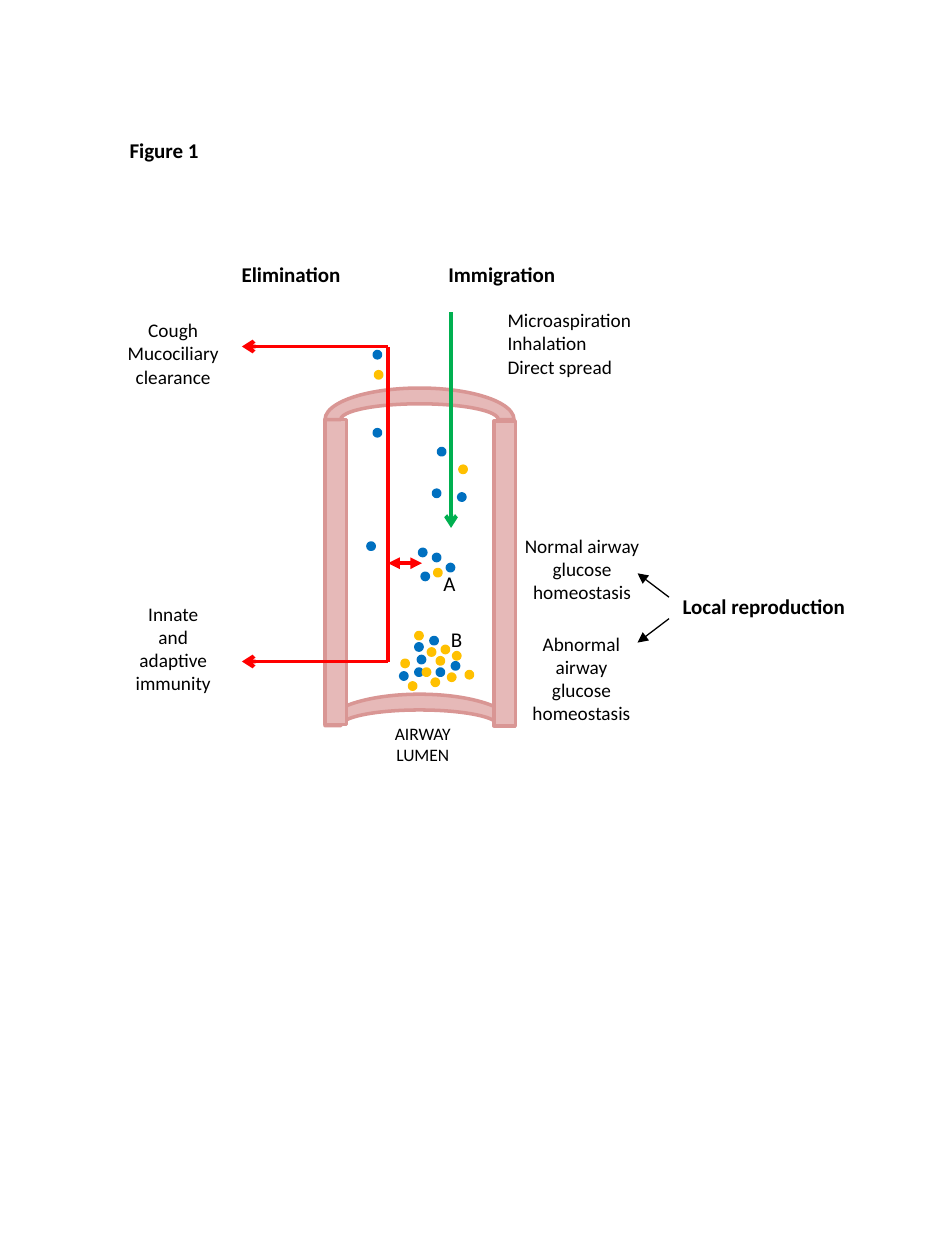
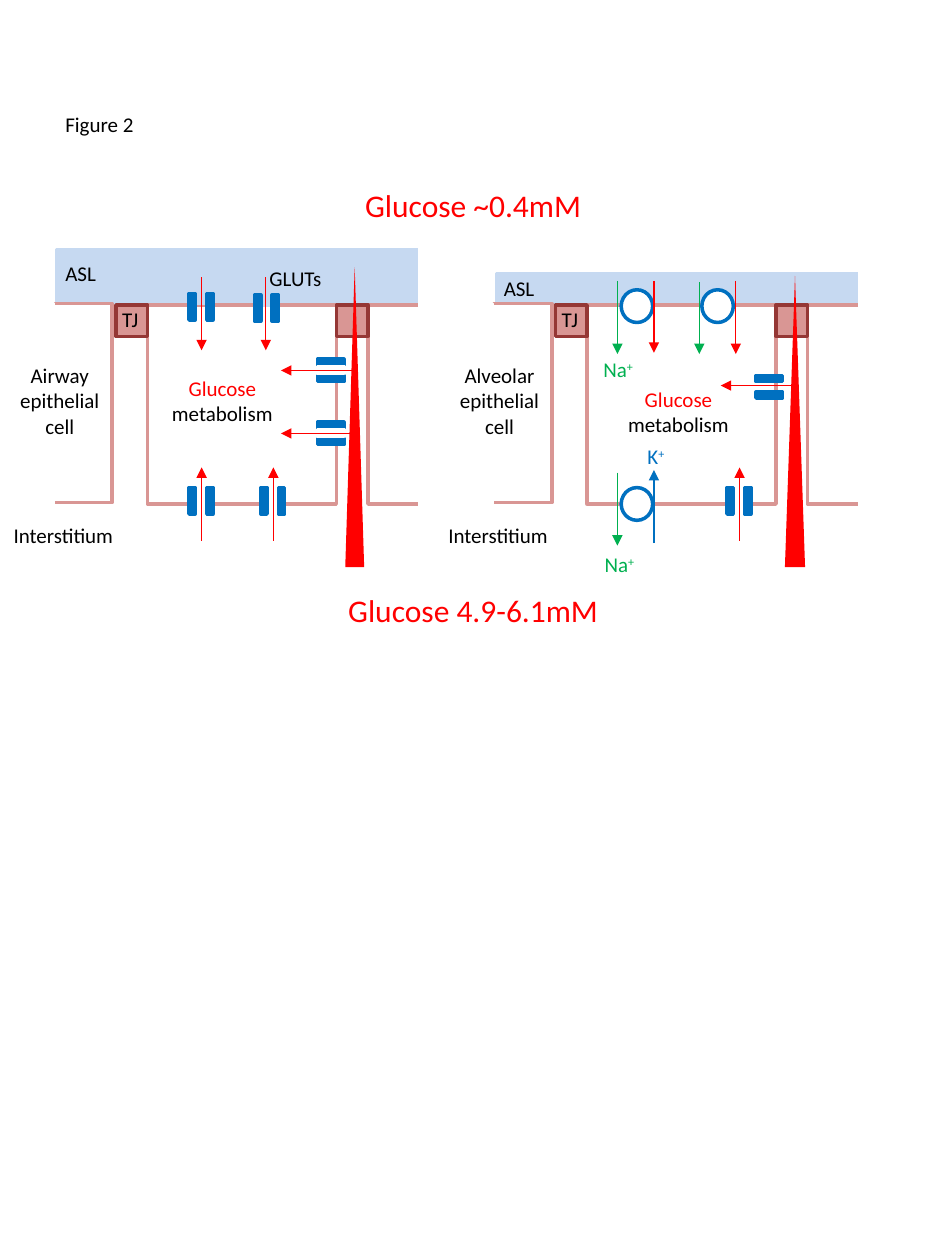
from lxml.etree import SubElement
from pptx import Presentation
from pptx.dml.color import RGBColor
from pptx.enum.shapes import MSO_CONNECTOR, MSO_SHAPE
from pptx.enum.text import MSO_AUTO_SIZE, PP_ALIGN
from pptx.oxml.ns import qn
from pptx.util import Inches, Pt

BLACK, WHITE, RED, GREEN = "000000", "FFFFFF", "FF0000", "00B050"
BLUE, YELLOW = "0070C0", "FFC000"
WALL, MEMBRANE, JUNCTION_EDGE, SURFACE_LIQUID = "E6B9B8", "D99694", "953735", "C6D9F1"

FONT = "Calibri"
HEADING = {"size": 12, "bold": True}
CENTRED_HEADING = HEADING | {"align": PP_ALIGN.CENTER}
DETAIL = {"size": 11}
CENTRED_DETAIL = {"size": 11, "align": PP_ALIGN.CENTER}
CAPTION = {"size": 10, "align": PP_ALIGN.CENTER}
LABEL = {"size": 12}
CENTRED_LABEL = {"size": 12, "align": PP_ALIGN.CENTER}
LETTER = {"size": 12, "wrap": False}
LEVEL = {"size": 18, "color": RED, "align": PP_ALIGN.CENTER}

# Slide 1: text is (content, left, top, width, height, format)
AIRWAY_WALL = [
    (MSO_SHAPE.BLOCK_ARC, 2.58, 5.51, 1.5, 0.5),
    (MSO_SHAPE.RECTANGLE, 2.58, 3.33, 0.17, 2.42),
    (MSO_SHAPE.RECTANGLE, 3.92, 3.34, 0.17, 2.42),
    (MSO_SHAPE.BLOCK_ARC, 2.58, 3.08, 1.5, 0.5),
]
BACTERIA = {
    BLUE: [
        (3.48, 3.56), (3.64, 3.92), (3.44, 3.89), (2.92, 4.31), (2.97, 3.41),
        (2.97, 2.79), (3.33, 4.36), (3.55, 4.48), (3.35, 4.55), (3.44, 4.4),
        (3.3, 5.11), (3.32, 5.21), (3.42, 5.06), (3.18, 5.34), (3.3, 5.31),
        (3.47, 5.31), (3.59, 5.26),
    ],
    YELLOW: [
        (3.3, 5.02), (3.19, 5.24), (3.47, 5.22), (3.7, 5.33), (3.65, 3.7),
        (2.98, 2.95), (3.45, 4.52), (3.36, 5.31), (3.25, 5.42), (3.4, 5.15),
        (3.51, 5.13), (3.56, 5.35), (3.6, 5.18), (3.43, 5.39),
    ],
}
BACTERIUM_SIZE = 0.05
# (start, end, colour, width, ends)
AIRWAY_ROUTES = [
    ((3.58, 2.48), (3.58, 4.19), GREEN, 2.25, {"tail": "arrow"}),
    ((3.08, 5.25), (3.08, 2.75), RED, 2.25, {}),
    ((3.08, 2.75), (1.92, 2.75), RED, 2.25, {"tail": "arrow"}),
    ((3.08, 5.25), (1.92, 5.25), RED, 2.25, {"tail": "arrow"}),
    ((5.31, 4.74), (5.06, 4.55), BLACK, 0.75, {"tail": "triangle"}),
    ((5.31, 4.91), (5.06, 5.1), BLACK, 0.75, {"tail": "triangle"}),
    ((3.35, 4.47), (3.08, 4.47), RED, 2.25, {"head": "triangle", "tail": "triangle"}),
]
AIRWAY_TEXTS = [
    ("Figure 1", 0.93, 1.04, 1.33, 0.3, HEADING),
    ("Elimination", 1.02, 2.03, 2.58, 0.3, CENTRED_HEADING),
    ("Immigration", 3.46, 2.03, 2.58, 0.3, HEADING),
    ("Local reproduction", 5.32, 4.66, 2.1, 0.3, HEADING),
    ("Microaspiration\nInhalation\nDirect spread", 3.93, 2.4, 2.17, 0.66, DETAIL),
    ("Cough\nMucociliary clearance", 0.86, 2.48, 1.03, 0.66, CENTRED_DETAIL),
    ("Innate and adaptive immunity", 0.95, 4.73, 0.85, 0.84, CENTRED_DETAIL),
    ("Normal airway glucose homeostasis", 4.05, 4.19, 1.14, 0.66, CENTRED_DETAIL),
    ("Abnormal airway glucose homeostasis", 4.11, 4.97, 1.01, 0.84, CENTRED_DETAIL),
    ("AIRWAY LUMEN", 2.88, 5.69, 0.95, 0.44, CAPTION),
    ("A", 3.42, 4.48, 0.3, 0.3, LETTER),
    ("B", 3.48, 4.92, 0.29, 0.3, LETTER),
]

# Slide 2: a run is (text, colour, superscript)
SODIUM = [("Na", GREEN, False), ("+", GREEN, True)]
POTASSIUM = [("K", BLUE, False), ("+", BLUE, True)]
METABOLISM = [("Glucose ", RED, False), ("metabolism", BLACK, False)]
GLUCOSE_TEXTS = [
    ("Figure 2", 0.42, 0.84, 4.58, 0.3, LABEL),
    ("Glucose ~0.4mM", 2.35, 1.43, 2.81, 0.4, LEVEL),
    ("Glucose 4.9-6.1mM", 2.35, 4.64, 2.81, 0.4, LEVEL),
]
# upright gates: (left, top, pore colour, pore width, pore height)
# level gates: (left, top, has pore)
# arrows: (start, end, colour)
EPITHELIA = [
    {
        "offset": 0,
        "liquid_top": 1.98,
        "gradient": (2.74, 2.12, 0.15),
        "upright_gates": [
            (1.5, 2.33, SURFACE_LIQUID, 0.07, 0.08),
            (2.02, 2.34, SURFACE_LIQUID, 0.07, 0.08),
            (1.5, 3.87, WHITE, 0.05, 0.21),
            (2.07, 3.87, WHITE, 0.05, 0.21),
        ],
        "level_gates": [(2.52, 2.85, True), (2.52, 3.35, True)],
        "pumps": [],
        "arrows": [
            ((2.81, 2.94), (2.23, 2.94), RED),
            ((2.81, 3.44), (2.23, 3.44), RED),
            ((1.6, 2.2), (1.6, 2.78), RED),
            ((2.11, 2.2), (2.11, 2.78), RED),
            ((1.6, 4.29), (1.6, 3.71), RED),
            ((2.17, 4.29), (2.17, 3.71), RED),
        ],
        "texts": [
            ("ASL", 0.42, 2.02, 1.13, 0.3, LABEL),
            ("TJ", 0.87, 2.38, 0.35, 0.3, LABEL),
            ("Airway epithelial cell", 0.06, 2.83, 0.83, 0.71, CENTRED_LABEL),
            ("Interstitium", 0.01, 4.1, 1.13, 0.3, LABEL),
            ("GLUTs", 2.04, 2.06, 0.98, 0.3, LABEL),
            (METABOLISM, 1.2, 2.93, 1.13, 0.5, CENTRED_LABEL),
        ],
    },
    {
        "offset": 3.49,
        "liquid_top": 2.17,
        "gradient": (6.23, 2.19, 0.16),
        "upright_gates": [(5.77, 3.87, WHITE, 0.05, 0.21)],
        "level_gates": [(6.0, 2.98, False)],
        "pumps": [(4.93, 2.3), (5.57, 2.3), (4.93, 3.87)],
        "arrows": [
            ((4.9, 2.23), (4.9, 2.81), GREEN),
            ((5.19, 2.23), (5.19, 2.8), RED),
            ((5.55, 2.24), (5.55, 2.81), GREEN),
            ((5.84, 2.23), (5.84, 2.81), RED),
            ((5.19, 4.31), (5.19, 3.73), BLUE),
            ((4.9, 3.75), (4.9, 4.33), GREEN),
            ((5.87, 4.29), (5.87, 3.71), RED),
            ((6.29, 3.06), (5.72, 3.06), RED),
        ],
        "texts": [
            ("ASL", 3.9, 2.14, 1.13, 0.3, LABEL),
            ("TJ", 4.36, 2.38, 0.35, 0.3, LABEL),
            ("Alveolar epithelial cell", 3.55, 2.83, 0.83, 0.71, CENTRED_LABEL),
            ("Interstitium", 3.46, 4.1, 1.13, 0.3, LABEL),
            (METABOLISM, 4.82, 3.02, 1.13, 0.5, CENTRED_LABEL),
            (SODIUM, 4.69, 2.78, 0.61, 0.3, LABEL),
            (POTASSIUM, 5.04, 3.47, 0.61, 0.3, LABEL),
            (SODIUM, 4.7, 4.33, 0.61, 0.3, LABEL),
        ],
    },
]
LIQUID_BOTTOM, GRADIENT_BOTTOM = 2.4, 4.5
BAR_WIDTH, BAR_LENGTH = 0.05, 0.21


def rgb(color):
    return RGBColor.from_string(color)


def add_figure(slide, preset, left, top, width, height, fill=None, edge=None):
    """Add a preset shape; a missing fill or edge stays transparent."""
    figure = slide.shapes.add_shape(preset, *map(Inches, (left, top, width, height)))
    figure.shadow.inherit = False
    for part, color in ((figure.fill, fill), (figure.line.fill, edge)):
        if color:
            part.solid()
            part.fore_color.rgb = rgb(color)
        else:
            part.background()
    if edge:
        figure.line.width = Pt(2)


def add_box(slide, left, top, width, height, fill=None, edge=None):
    add_figure(slide, MSO_SHAPE.RECTANGLE, left, top, width, height, fill, edge or fill)


def add_route(slide, start, end, color, width=0.75, ends=None):
    """Add a straight line with optional head and tail arrowheads."""
    points = map(Inches, (*start, *end))
    route = slide.shapes.add_connector(MSO_CONNECTOR.STRAIGHT, *points)
    route.line.color.rgb = rgb(color)
    route.line.width = Pt(width)
    outline = route.line._get_or_add_ln()
    for end_name, kind in ({"tail": "triangle"} if ends is None else ends).items():
        SubElement(outline, qn(f"a:{end_name}End"), type=kind)
    SubElement(route._element.spPr, qn("a:effectLst"))


def add_text(slide, content, left, top, width, height, style):
    """Add text given as lines in a string or as the runs of one paragraph."""
    frame = slide.shapes.add_textbox(*map(Inches, (left, top, width, height))).text_frame
    frame.word_wrap = style.get("wrap", True)
    frame.auto_size = MSO_AUTO_SIZE.SHAPE_TO_FIT_TEXT
    if isinstance(content, str):
        color = style.get("color", BLACK)
        paragraphs = [[(line, color, False)] for line in content.split("\n")]
    else:
        paragraphs = [content]
    font_values = {"name": FONT, "size": Pt(style["size"]), "bold": style.get("bold")}
    for index, runs in enumerate(paragraphs):
        paragraph = frame.add_paragraph() if index else frame.paragraphs[0]
        paragraph.alignment = style.get("align", PP_ALIGN.LEFT)
        for words, color, superscript in runs:
            run = paragraph.add_run()
            run.text = words
            for attribute, value in font_values.items():
                setattr(run.font, attribute, value)
            run.font.color.rgb = rgb(color)
            if superscript:
                run._r.get_or_add_rPr().set("baseline", "30000")


def draw_airway(slide):
    for preset, *place in AIRWAY_WALL:
        add_figure(slide, preset, *place, WALL, MEMBRANE)
    for route in AIRWAY_ROUTES:
        add_route(slide, *route)
    for color, places in BACTERIA.items():
        for left, top in places:
            add_figure(slide, MSO_SHAPE.OVAL, left, top, BACTERIUM_SIZE, BACTERIUM_SIZE,
                       color, color)
    for text in AIRWAY_TEXTS:
        add_text(slide, *text)


def draw_cells(slide, offset, liquid_top):
    """Draw the liquid layer, the middle cell, its cut-off neighbours and junctions."""
    add_box(slide, 0.45 + offset, liquid_top, 2.88, LIQUID_BOTTOM - liquid_top, SURFACE_LIQUID)
    for left, top, width in ((1.17, 2.42, 1.5), (2.92, 2.42, 0.55), (0.38, 2.41, 0.51)):
        add_box(slide, left + offset, top, width, 1.58, edge=MEMBRANE)
    for left in (0.92, 2.67):
        add_box(slide, left + offset, 2.42, 0.25, 0.25, MEMBRANE, JUNCTION_EDGE)
    for left, top, width, height in ((0.28, 2.41, 0.14, 1.76), (3.33, 1.92, 0.25, 2.25)):
        add_box(slide, left + offset, top, width, height, WHITE)


def draw_epithelium(slide, epithelium):
    draw_cells(slide, epithelium["offset"], epithelium["liquid_top"])
    for left, top, pore_color, pore_width, pore_height in epithelium["upright_gates"]:
        add_box(slide, left + 0.07, top, pore_width, pore_height, pore_color)
        for bar_left in (left, left + 0.14):
            add_box(slide, bar_left, top, BAR_WIDTH, BAR_LENGTH, BLUE)
    for left, top, has_pore in epithelium["level_gates"]:
        for bar_top in (top, top + 0.13):
            add_box(slide, left, bar_top, BAR_LENGTH, BAR_WIDTH, BLUE)
        if has_pore:
            add_box(slide, left, top + 0.06, BAR_LENGTH, BAR_WIDTH, WHITE)
    for left, top in epithelium["pumps"]:
        add_figure(slide, MSO_SHAPE.OVAL, left, top, 0.25, 0.26, WHITE, BLUE)
    for arrow in epithelium["arrows"]:
        add_route(slide, *arrow)
    left, top, width = epithelium["gradient"]
    add_figure(slide, MSO_SHAPE.ISOSCELES_TRIANGLE, left, top, width,
               GRADIENT_BOTTOM - top, RED)
    for text in epithelium["texts"]:
        add_text(slide, *text)


def main():
    presentation = Presentation()
    presentation.slide_width, presentation.slide_height = Inches(7.5), Inches(10)
    blank = presentation.slide_layouts[6]
    draw_airway(presentation.slides.add_slide(blank))
    glucose_slide = presentation.slides.add_slide(blank)
    for epithelium in EPITHELIA:
        draw_epithelium(glucose_slide, epithelium)
    for text in GLUCOSE_TEXTS:
        add_text(glucose_slide, *text)
    presentation.save("out.pptx")


if __name__ == "__main__":
    main()
